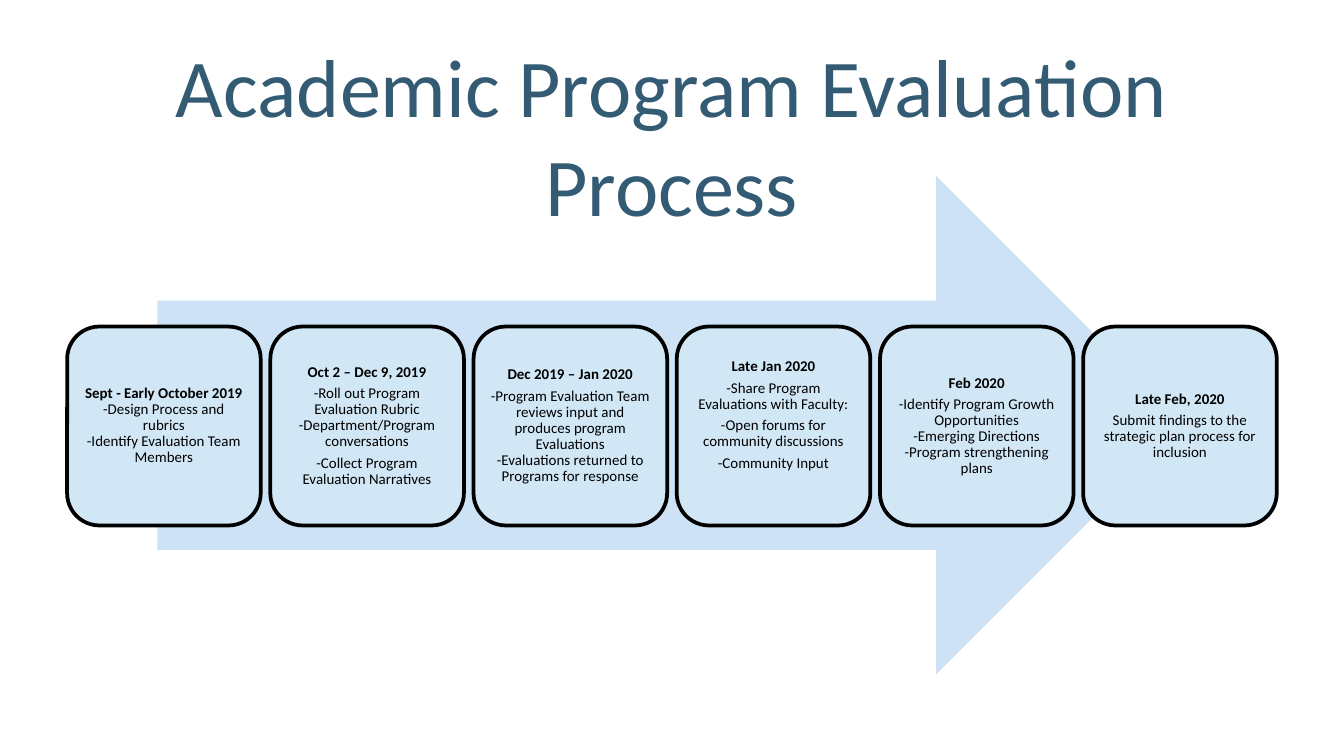
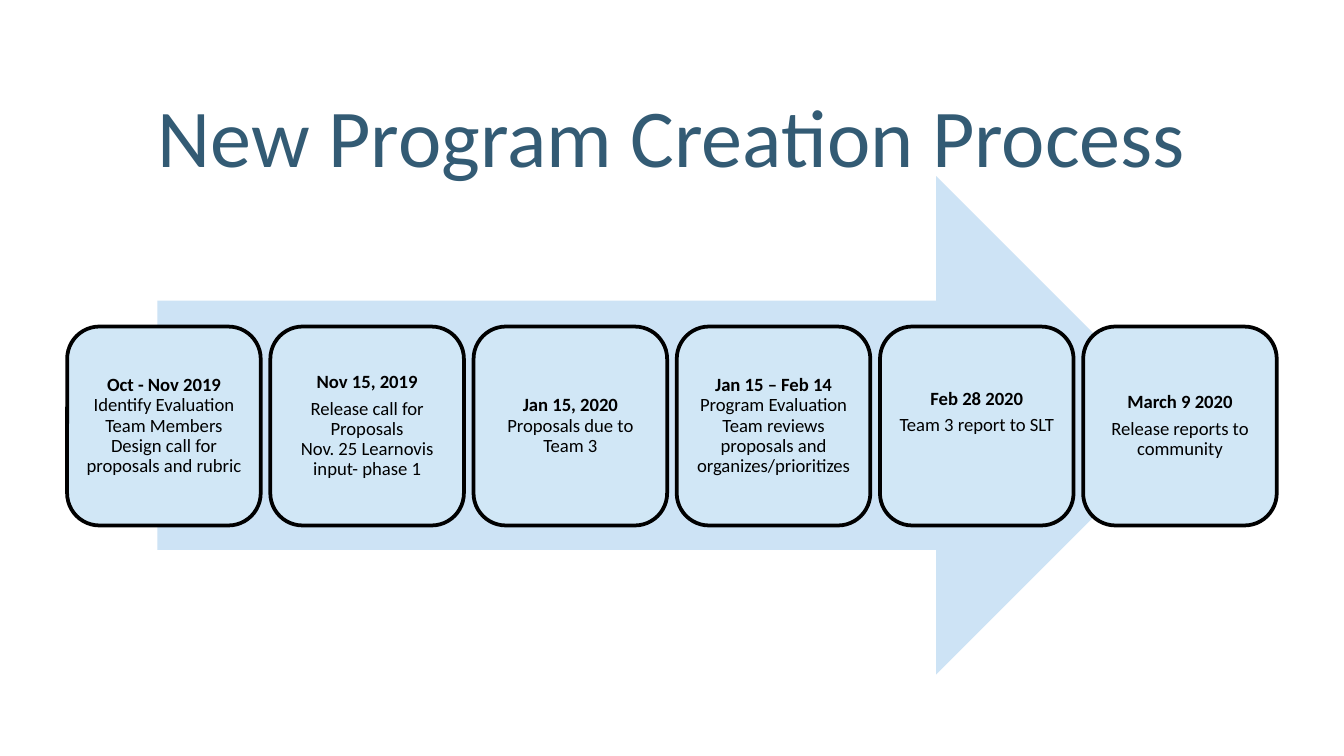
"""Build two process timelines, each with six steps on a wide arrow."""
from dataclasses import dataclass

from pptx import Presentation
from pptx.dml.color import RGBColor
from pptx.enum.shapes import MSO_SHAPE
from pptx.enum.text import MSO_ANCHOR, PP_ALIGN
from pptx.util import Inches, Pt

TITLE_BLUE = RGBColor(0x33, 0x5B, 0x74)
ARROW_BLUE = RGBColor(0xCD, 0xE3, 0xF5)
STEP_BLUE = RGBColor(0xD1, 0xE7, 0xF6)
BLACK = RGBColor(0x00, 0x00, 0x00)
RIGHT_ARROW = MSO_SHAPE.RIGHT_ARROW
ROUNDED = MSO_SHAPE.ROUNDED_RECTANGLE
CENTER = PP_ALIGN.CENTER
MIDDLE = MSO_ANCHOR.MIDDLE
FONT = "Calibri"
PAGE_WIDTH = Inches(10)
PAGE_HEIGHT = PAGE_WIDTH * 9 // 16
STEP_LEFT, STEP_TOP, STEP_WIDTH, STEP_HEIGHT = 0.5, 2.43, 1.44, 1.48
STEP_PITCH = (9 - STEP_WIDTH) / 5
LINE_SPACING = 0.9
GAP_RATIO = 0.35


@dataclass(frozen=True)
class Step:
    """Groups of lines set apart by gaps; the first line is the date."""

    groups: tuple[tuple[str, ...], ...]
    lift: float = 0


@dataclass(frozen=True)
class Process:
    """A titled timeline with its text size, inset and steps."""

    title: str
    size: int
    inset: float
    steps: tuple[Step, ...]


PROCESSES = (
    Process("Academic Program Evaluation Process", 8, 0.03, (
        Step((("Sept - Early October 2019", "-Design Process and rubrics",
               "-Identify Evaluation Team Members"),)),
        Step((("Oct 2 – Dec 9, 2019",),
              ("-Roll out Program Evaluation Rubric",
               "-Department/Program conversations"),
              ("-Collect Program Evaluation Narratives",))),
        Step((("Dec 2019 – Jan 2020",),
              ("-Program Evaluation Team reviews input and produces program Evaluations",
               "-Evaluations returned to Programs for response"))),
        Step((("Late Jan 2020",),
              ("-Share Program Evaluations with Faculty:",),
              ("-Open forums for community discussions",),
              ("-Community Input",)), lift=0.16),
        Step((("Feb 2020",),
              ("-Identify Program Growth Opportunities",
               "-Emerging Directions", "-Program strengthening plans"))),
        Step((("Late Feb, 2020",),
              ("Submit findings to the strategic plan process for inclusion",))),
    )),
    Process("New Program Creation Process", 10, 0.04, (
        Step((("Oct - Nov 2019", "Identify Evaluation Team Members",
               "Design call for proposals and rubric"),)),
        Step((("Nov 15, 2019",),
              ("Release call for Proposals",
               "Nov. 25 Learnovis input- phase 1"))),
        Step((("Jan 15, 2020", "Proposals due to Team 3"),)),
        Step((("Jan 15 – Feb 14",
               "Program Evaluation Team reviews proposals and organizes/prioritizes"),)),
        Step((("Feb 28 2020",), ("Team 3 report to SLT",)), lift=0.2),
        Step((("March 9 2020",), ("Release reports to community",))),
    )),
)


def style_paragraph(para, size: int, color: RGBColor, bold: bool = False) -> None:
    """Centre a paragraph and set the font of its runs."""
    para.alignment = CENTER
    for span in para.runs:
        span.font.name = FONT
        span.font.size = Pt(size)
        span.font.bold = bold
        span.font.color.rgb = color


def add_title(page, title: str) -> None:
    """Add the large centred title."""
    box = page.shapes.add_textbox(Inches(0.5), Inches(0.23), Inches(9), Inches(1.54))
    frame = box.text_frame
    frame.word_wrap = True
    frame.vertical_anchor = MIDDLE
    frame.text = title
    style_paragraph(frame.paragraphs[0], 44, TITLE_BLUE)


def add_arrow(page) -> None:
    """Add the wide arrow behind the steps."""
    arrow = page.shapes.add_shape(
        RIGHT_ARROW, Inches(1.17), Inches(1.31), Inches(7.65), Inches(3.71))
    arrow.shadow.inherit = False
    arrow.fill.solid()
    arrow.fill.fore_color.rgb = ARROW_BLUE
    arrow.line.fill.background()


def add_step(page, index: int, step: Step, process: Process) -> None:
    """Add one rounded step box with its date and lines."""
    box = page.shapes.add_shape(
        ROUNDED, Inches(STEP_LEFT + index * STEP_PITCH), Inches(STEP_TOP),
        Inches(STEP_WIDTH), Inches(STEP_HEIGHT))
    box.shadow.inherit = False
    box.fill.solid()
    box.fill.fore_color.rgb = STEP_BLUE
    box.line.color.rgb = BLACK
    box.line.width = Pt(2)

    frame = box.text_frame
    frame.word_wrap = True
    frame.vertical_anchor = MIDDLE
    frame.margin_left = frame.margin_right = frame.margin_top = Inches(process.inset)
    frame.margin_bottom = Inches(process.inset + step.lift)
    para = frame.paragraphs[0]
    for group_index, group in enumerate(step.groups):
        for line_index, line in enumerate(group):
            is_date = group_index == line_index == 0
            if not is_date:
                para = frame.add_paragraph()
            para.text = line
            para.line_spacing = LINE_SPACING
            if line_index == 0 and not is_date:
                para.space_before = Pt(process.size * GAP_RATIO)
            style_paragraph(para, process.size, BLACK, bold=is_date)


def add_process(deck, process: Process) -> None:
    """Add one slide that shows a process."""
    page = deck.slides.add_slide(deck.slide_layouts[6])
    add_title(page, process.title)
    add_arrow(page)
    for index, step in enumerate(process.steps):
        add_step(page, index, step, process)


def main() -> None:
    """Build and save the deck."""
    deck = Presentation()
    deck.slide_width = PAGE_WIDTH
    deck.slide_height = PAGE_HEIGHT
    for process in PROCESSES:
        add_process(deck, process)
    deck.save("out.pptx")


if __name__ == "__main__":
    main()
